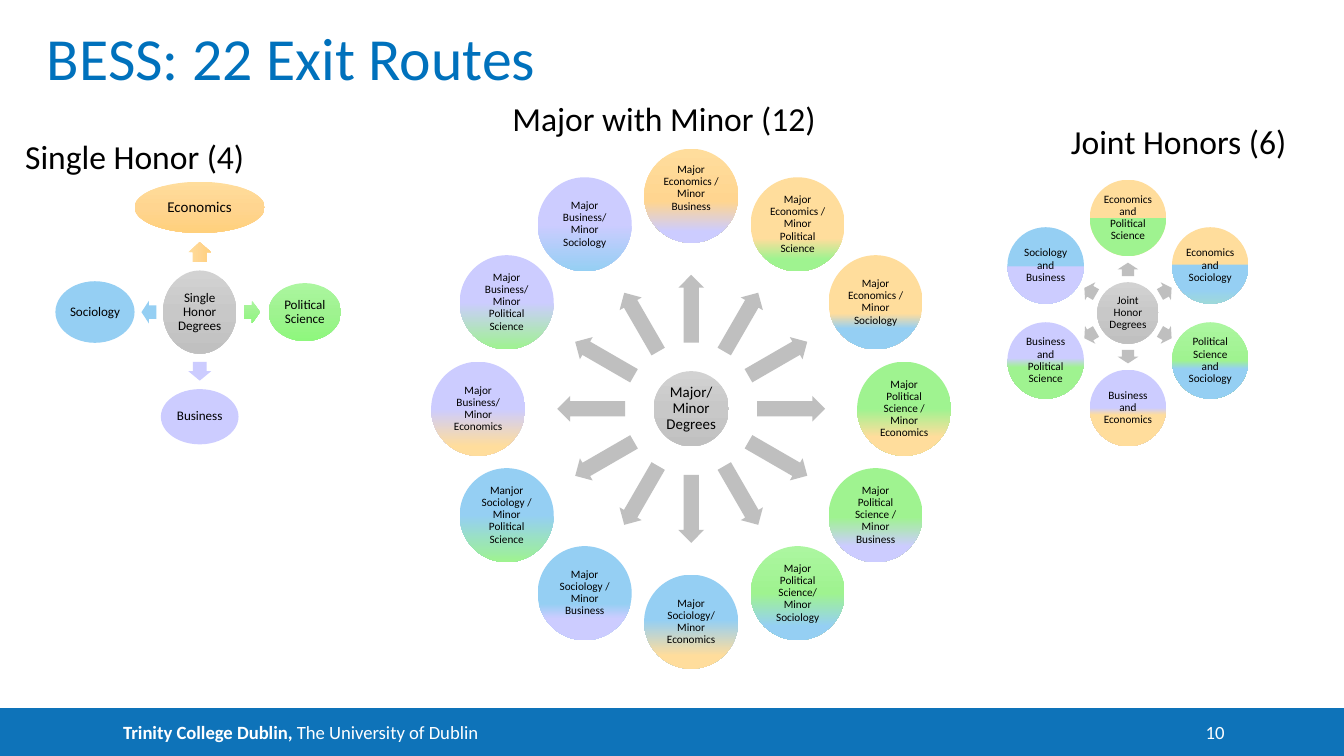
"""Build the slide on the BESS exit routes with its three radial diagrams."""
from dataclasses import dataclass
from math import cos, radians, sin

from lxml import etree
from pptx import Presentation
from pptx import util as u
from pptx.dml import color
from pptx.enum import shapes, text
from pptx.oxml import ns

Stops = tuple[tuple[int, str], ...]

COLOURS = {
    "black": "000000", "white": "FFFFFF", "title": "0071BC", "footer": "0E73B9",
    "silver": "D2D2D2", "steel": "C8C8C8", "ash": "C0C0C0", "arrow": "BFBFBF",
    "cream": "FFDD9C", "amber": "FFD590", "gold": "FFD07C",
    "mint": "ACF6A0", "green": "9FF390", "lime": "8EF77D",
    "blue": "95CFF3", "aqua": "9ED9DA", "lilac": "CCCCFF",
}
HUB: Stops = ((0, "silver"), (50, "steel"), (100, "ash"))
GREY: Stops = ((0, "arrow"),)
ORANGE: Stops = ((0, "cream"), (50, "amber"), (100, "gold"))
GREEN: Stops = ((0, "mint"), (50, "green"), (100, "lime"))
LILAC: Stops = ((0, "lilac"),)
BLUE: Stops = ((0, "blue"),)
INSETS = ("margin_left", "margin_top", "margin_right", "margin_bottom")
NODE_INSET = 0.72


@dataclass(frozen=True)
class Span:
    """A stretch of text with one weight."""
    wording: str
    bold: bool = False


@dataclass(frozen=True)
class Style:
    """The look of one paragraph and its frame."""
    size: float
    colour: str = "black"
    align: text.PP_ALIGN = text.PP_ALIGN.LEFT
    anchor: text.MSO_ANCHOR = text.MSO_ANCHOR.TOP
    insets: tuple[float, float, float, float] = (0, 0, 0, 0)
    line_spacing: float = 1.0
    after: float = 0


@dataclass(frozen=True)
class Node:
    """An ellipse with a label, placed by its centre."""
    label: str
    x: float
    y: float
    width: float
    height: float
    size: float
    stops: Stops
    lift: float = 0


@dataclass(frozen=True)
class Arrow:
    """A block arrow, placed by its centre and turned clockwise."""
    x: float
    y: float
    length: float
    breadth: float
    turn: float
    stops: Stops = GREY


@dataclass(frozen=True)
class Route:
    """One label on a ring with its blend of colours."""
    label: str
    stops: Stops
    lift: float = 0


@dataclass(frozen=True)
class Ring:
    """A hub with routes spread evenly clockwise from the top."""
    hub: Node
    radius: float
    diameter: float
    arrow_radius: float
    arrow_length: float
    arrow_breadth: float
    routes: tuple[Route, ...]


SINGLE_NODES = (
    Node("Single Honor Degrees", 107, 167.2, 39.4, 44.6, 7, HUB),
    Node("Economics", 107, 111.1, 69.8, 27.4, 8, ORANGE),
    Node("Political Science", 163.3, 167.2, 38.8, 31, 7, GREEN),
    Node("Business", 107, 223.3, 41.6, 29.6, 7, LILAC),
    Node("Sociology", 50.9, 167.2, 42.4, 33, 7, BLUE),
)
SINGLE_ARROWS = (
    Arrow(107, 135.1, 10.8, 12.2, 270, ORANGE),
    Arrow(135, 167.2, 8.7, 12.2, 0, GREEN),
    Arrow(107, 198.9, 10.1, 12.2, 90, LILAC),
    Arrow(79.8, 167.2, 8, 12.2, 180, BLUE),
)
JOINT = Ring(
    Node("Joint Honor Degrees", 604.3, 167.7, 33, 33, 6, HUB), 50.9, 41, 23.4, 7.2, 11,
    (
        Route("Economics and Political Science", ((50, "cream"), (50, "green"))),
        Route("Economics and Sociology", ((48, "cream"), (50, "blue"), (81, "blue"), (100, "aqua"))),
        Route("Political Science and Sociology", ((0, "mint"), (50, "green"), (61, "blue"))),
        Route("Business and Economics", ((50, "lilac"), (59, "cream"))),
        Route("Business and Political Science", ((47, "lilac"), (59, "green"))),
        Route("Sociology and Business", ((50, "blue"), (52, "lilac"))),
    ),
)
MAJOR = Ring(
    Node("Major/ Minor Degrees", 370.3, 219, 40.3, 40.3, 8, HUB), 114.1, 50.4, 53.6, 36.4, 13.7,
    (
        Route("Major Economics / Minor Business",
              ((0, "cream"), (56, "amber"), (88, "lilac")), 8),
        Route("Major Economics / Minor Political Science", ((65, "cream"), (87, "green"))),
        Route("Major Economics / Minor Sociology", ((62, "cream"), (78, "blue"))),
        Route("Major Political Science / Minor Economics", ((50, "green"), (80, "cream"))),
        Route("Major Political Science / Minor Business", ((52, "green"), (83, "lilac"))),
        Route("Major Political Science/ Minor Sociology",
              ((0, "mint"), (50, "green"), (85, "blue"))),
        Route("Major Sociology/ Minor Economics", ((48, "blue"), (86, "cream"))),
        Route("Major Sociology / Minor Business", ((61, "blue"), (77, "lilac"))),
        Route("Manjor Sociology / Minor Political Science", ((50, "blue"), (100, "green"))),
        Route("Major Business/ Minor Economics", ((50, "lilac"), (90, "cream"))),
        Route("Major Business/ Minor Political Science", ((50, "lilac"), (100, "green"))),
        Route("Major Business/ Minor Sociology", ((50, "lilac"), (100, "blue"))),
    ),
)


def apply(target, values: dict) -> None:
    """Set each named attribute on the target."""
    for name, value in values.items():
        setattr(target, name, value)


def paint(shape, stops: Stops) -> None:
    """Fill a shape with one colour or a downward gradient."""
    if len(stops) == 1:
        shape.fill.solid()
        shape.fill.fore_color.rgb = color.RGBColor.from_string(COLOURS[stops[0][1]])
        return
    shape.fill.gradient()
    shape.fill.gradient_angle = 270
    listing = shape._element.spPr.find(".//" + ns.qn("a:gsLst"))
    for stop in list(listing):
        listing.remove(stop)
    for position, name in stops:
        stop = etree.SubElement(listing, ns.qn("a:gs"), pos=str(position * 1000))
        etree.SubElement(stop, ns.qn("a:srgbClr"), val=COLOURS[name])


def write(box, spans: tuple[Span, ...], style: Style) -> None:
    """Put one styled paragraph into a shape."""
    frame = box.text_frame
    apply(frame, {"word_wrap": True, "vertical_anchor": style.anchor})
    apply(frame, dict(zip(INSETS, map(u.Pt, style.insets))))
    para = frame.paragraphs[0]
    apply(para, {"alignment": style.align, "line_spacing": style.line_spacing,
                 "space_after": u.Pt(style.after)})
    for span in spans:
        run = para.add_run()
        run.text = span.wording
        apply(run.font, {"name": "Calibri", "size": u.Pt(style.size), "bold": span.bold})
        run.font.color.rgb = color.RGBColor.from_string(COLOURS[style.colour])


def add_text(page, area: tuple[float, float, float, float], wording: str, style: Style) -> None:
    """Add a text box at left, top, width and height."""
    write(page.shapes.add_textbox(*map(u.Pt, area)), (Span(wording),), style)


def add_block(page, kind, x: float, y: float, width: float, height: float, stops: Stops):
    """Add a borderless filled shape by its centre."""
    area = (x - width / 2, y - height / 2, width, height)
    block = page.shapes.add_shape(kind, *map(u.Pt, area))
    block.shadow.inherit = False
    block.line.fill.background()
    paint(block, stops)
    return block


def add_node(page, node: Node) -> None:
    """Draw a labelled ellipse."""
    oval = add_block(page, shapes.MSO_SHAPE.OVAL, node.x, node.y, node.width, node.height, node.stops)
    insets = (NODE_INSET, NODE_INSET, NODE_INSET, NODE_INSET + node.lift)
    write(oval, (Span(node.label),), Style(node.size, "black", text.PP_ALIGN.CENTER,
          text.MSO_ANCHOR.MIDDLE, insets, 0.9, round(node.size * 0.35, 1)))


def add_arrow(page, arrow: Arrow) -> None:
    """Draw a turned block arrow."""
    block = add_block(page, shapes.MSO_SHAPE.RIGHT_ARROW, arrow.x, arrow.y,
                      arrow.length, arrow.breadth, arrow.stops)
    block.adjustments[0] = 0.6
    block.rotation = arrow.turn


def add_ring(page, ring: Ring) -> None:
    """Draw a hub with its arrows and routes."""
    hub = ring.hub
    add_node(page, hub)
    for index, route in enumerate(ring.routes):
        turn = (270 + index * 360 / len(ring.routes)) % 360
        across, down = cos(radians(turn)), sin(radians(turn))
        add_arrow(page, Arrow(hub.x + ring.arrow_radius * across, hub.y + ring.arrow_radius * down,
                              ring.arrow_length, ring.arrow_breadth, turn))
        add_node(page, Node(route.label, hub.x + ring.radius * across, hub.y + ring.radius * down,
                            ring.diameter, ring.diameter, 6, route.stops, route.lift))


def main() -> None:
    """Build and save the deck."""
    deck = Presentation()
    apply(deck, {"slide_width": u.Pt(720), "slide_height": u.Pt(405)})
    page = deck.slides.add_slide(deck.slide_layouts[6])
    footer = add_block(page, shapes.MSO_SHAPE.RECTANGLE, 360, 392.2, 720, 25.6, ((0, "footer"),))
    write(footer, (Span("Trinity College Dublin, ", True), Span("The University of Dublin")),
          Style(10, "white", anchor=text.MSO_ANCHOR.MIDDLE, insets=(66, 0, 0, 0)))
    add_text(page, (626.4, 386, 29.5, 12.2), "10", Style(10, "white", text.PP_ALIGN.RIGHT))
    add_text(page, (25.2, 16.6, 590.4, 33.1), "BESS: 22 Exit Routes",
             Style(32, "title", anchor=text.MSO_ANCHOR.BOTTOM))
    for node in SINGLE_NODES:
        add_node(page, node)
    for arrow in SINGLE_ARROWS:
        add_arrow(page, arrow)
    add_ring(page, JOINT)
    add_ring(page, MAJOR)
    heading = {"size": 18, "insets": (7.2, 3.6, 7.2, 3.6)}
    centred = Style(align=text.PP_ALIGN.CENTER, **heading)
    add_text(page, (175.8, 49, 360, 29), "Major with Minor (12)", centred)
    add_text(page, (566.6, 61.2, 144.7, 29), "Joint Honors (6)", Style(**heading))
    add_text(page, (-8.8, 69.1, 162, 29), "Single Honor (4)", centred)
    deck.save("out.pptx")


if __name__ == "__main__":
    main()
